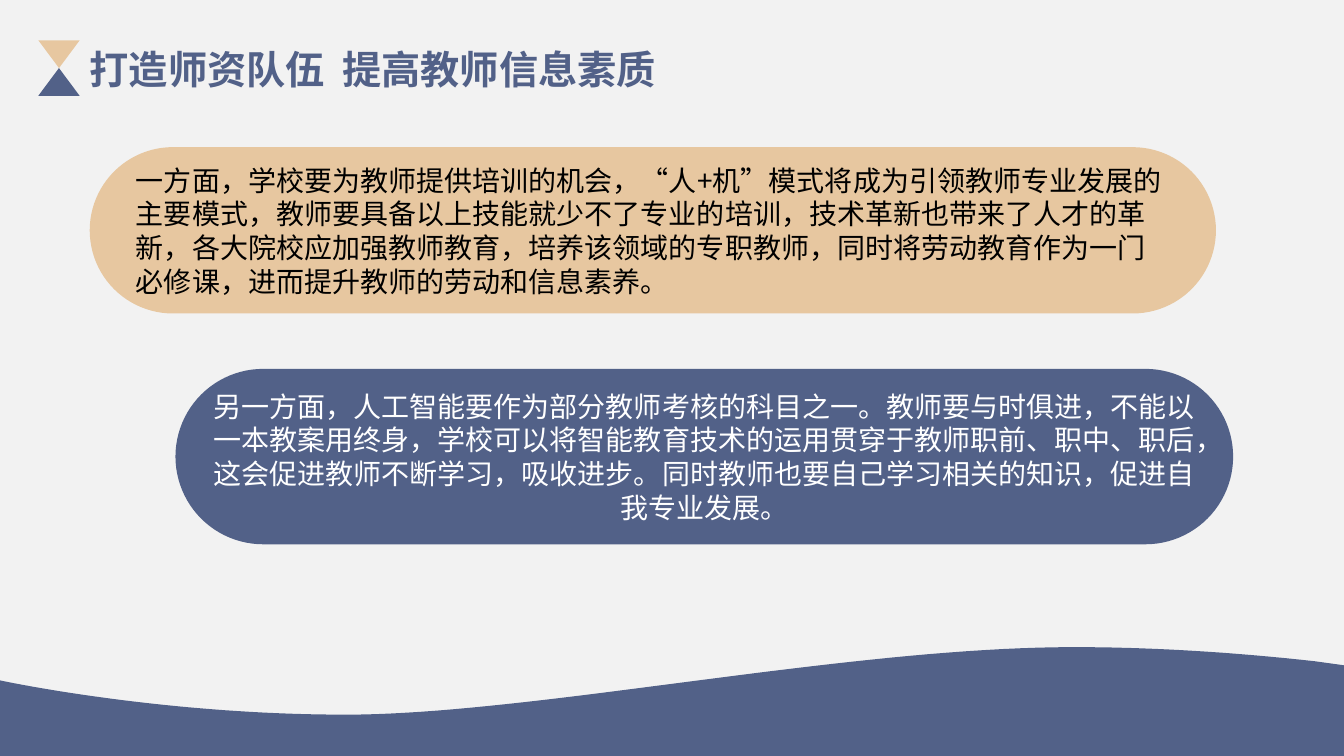
from lxml.etree import SubElement
from pptx import Presentation
from pptx.dml.color import RGBColor
from pptx.enum.shapes import MSO_SHAPE as Preset
from pptx.enum.text import MSO_ANCHOR as Anchor, MSO_AUTO_SIZE as AutoSize, PP_ALIGN as Align
from pptx.oxml.ns import qn
from pptx.util import Inches, Pt

TITLE = "打造师资队伍  提高教师信息素质"
TRAINING = (
    "一方面，学校要为教师提供培训的机会，“人+机”模式将成为引领教师专业发展的主要模式，"
    "教师要具备以上技能就少不了专业的培训，技术革新也带来了人才的革新，"
    "各大院校应加强教师教育，培养该领域的专职教师，"
    "同时将劳动教育作为一门必修课，进而提升教师的劳动和信息素养。"
)
ASSESSMENT = (
    "另一方面，人工智能要作为部分教师考核的科目之一。教师要与时俱进，"
    "不能以一本教案用终身，学校可以将智能教育技术的运用贯穿于教师职前、职中、职后，"
    "这会促进教师不断学习，吸收进步。同时教师也要自己学习相关的知识，促进自我专业发展。"
)


def color(value):
    return RGBColor.from_string(value)


def curve(start, control1, control2, end, steps=40):
    """Points along a cubic curve, without its start."""
    points = []
    for step in range(1, steps + 1):
        t = step / steps
        weights = ((1 - t) ** 3, 3 * t * (1 - t) ** 2, 3 * t * t * (1 - t), t ** 3)
        corners = (start, control1, control2, end)
        points.append(tuple(sum(w * c[axis] for w, c in zip(weights, corners))
                            for axis in (0, 1)))
    return points


class SlideBuilder:
    BLUE, SAND, PAPER = "526188", "E7C7A0", "F2F2F2"
    BLACK, WHITE = "000000", "FFFFFF"
    FONT = "Noto Sans CJK SC"

    def __init__(self, page):
        self.page = page
        page.background.fill.solid()
        page.background.fill.fore_color.rgb = color(self.PAPER)

    def paint(self, shape, fill):
        shape.shadow.inherit = False
        shape.fill.solid()
        shape.fill.fore_color.rgb = color(fill)
        shape.line.fill.background()
        return shape

    def set_text(self, shape, text, size, ink, bold=False, align=Align.LEFT, anchor=Anchor.TOP):
        frame = shape.text_frame
        frame.word_wrap = True
        frame.auto_size = AutoSize.NONE
        frame.vertical_anchor = anchor
        para = frame.paragraphs[0]
        para.text = text
        para.alignment = align
        font = para.font
        font.size, font.bold, font.name = Pt(size), bold, self.FONT
        font.color.rgb = color(ink)
        # East Asian typeface
        SubElement(para._p.pPr.find(qn("a:defRPr")), qn("a:ea"), typeface=self.FONT)

    def title(self, text, *place):
        box = self.page.shapes.title
        box.left, box.top, box.width, box.height = map(Inches, place)
        self.set_text(box, text, 28, self.BLUE, bold=True)

    def text(self, text, *place):
        box = self.page.shapes.add_textbox(*map(Inches, place))
        self.set_text(box, text, 20, self.BLACK)

    def pill(self, fill, *place):
        shape = self.page.shapes.add_shape(Preset.ROUNDED_RECTANGLE, *map(Inches, place))
        shape.adjustments[0] = 0.5
        return self.paint(shape, fill)

    def hourglass(self, left, top, width, height):
        group = self.page.shapes.add_group_shape()
        for row, fill, turn in ((1, self.BLUE, 0), (0, self.SAND, 180)):
            half = group.shapes.add_shape(
                Preset.ISOSCELES_TRIANGLE, Inches(left), Inches(top + row * height / 2),
                Inches(width), Inches(height / 2))
            half.rotation = turn
            self.paint(half, fill)

    def outline(self, points, fill):
        start, *others = [(Inches(x), Inches(y)) for x, y in points]
        builder = self.page.shapes.build_freeform(*start)
        builder.add_line_segments(others, close=True)
        self.paint(builder.convert_to_shape(), fill)


def main():
    deck = Presentation()
    deck.slide_width, deck.slide_height = Inches(13.33), Inches(7.5)
    slide = SlideBuilder(deck.slides.add_slide(deck.slide_layouts[5]))

    # Wave along the bottom edge
    crest, trough, left_edge = (10.65, 6.42), (3.43, 7.09), (0, 6.75)
    right_edge = (13.04, 6.56)
    wave = [crest]
    wave += curve(crest, (8.4, 6.42), (5.28, 7.09), trough)
    wave += curve(trough, (1.57, 7.09), left_edge, left_edge)
    wave += [(0, 7.53), (13.33, 7.53), (13.33, 6.6), right_edge]
    wave += curve(right_edge, (12.32, 6.48), (11.49, 6.42), crest)
    slide.outline(wave, slide.BLUE)

    # Heading
    slide.hourglass(0.38, 0.4, 0.41, 0.55)
    slide.title(TITLE, 0.79, 0.4, 6.67, 0.57)

    # Teacher training
    slide.pill(slide.SAND, 0.89, 1.46, 11.17, 1.65)
    slide.text(TRAINING, 1.25, 1.57, 10.45, 1.78)

    # Teacher assessment
    pill = slide.pill(slide.BLUE, 1.74, 3.66, 10.49, 1.74)
    frame = pill.text_frame
    frame.margin_left = frame.margin_right = Inches(0.05)
    frame.margin_top = frame.margin_bottom = Inches(0.02)
    slide.set_text(pill, ASSESSMENT, 20, slide.WHITE, align=Align.CENTER, anchor=Anchor.MIDDLE)

    deck.save("out.pptx")


if __name__ == "__main__":
    main()
